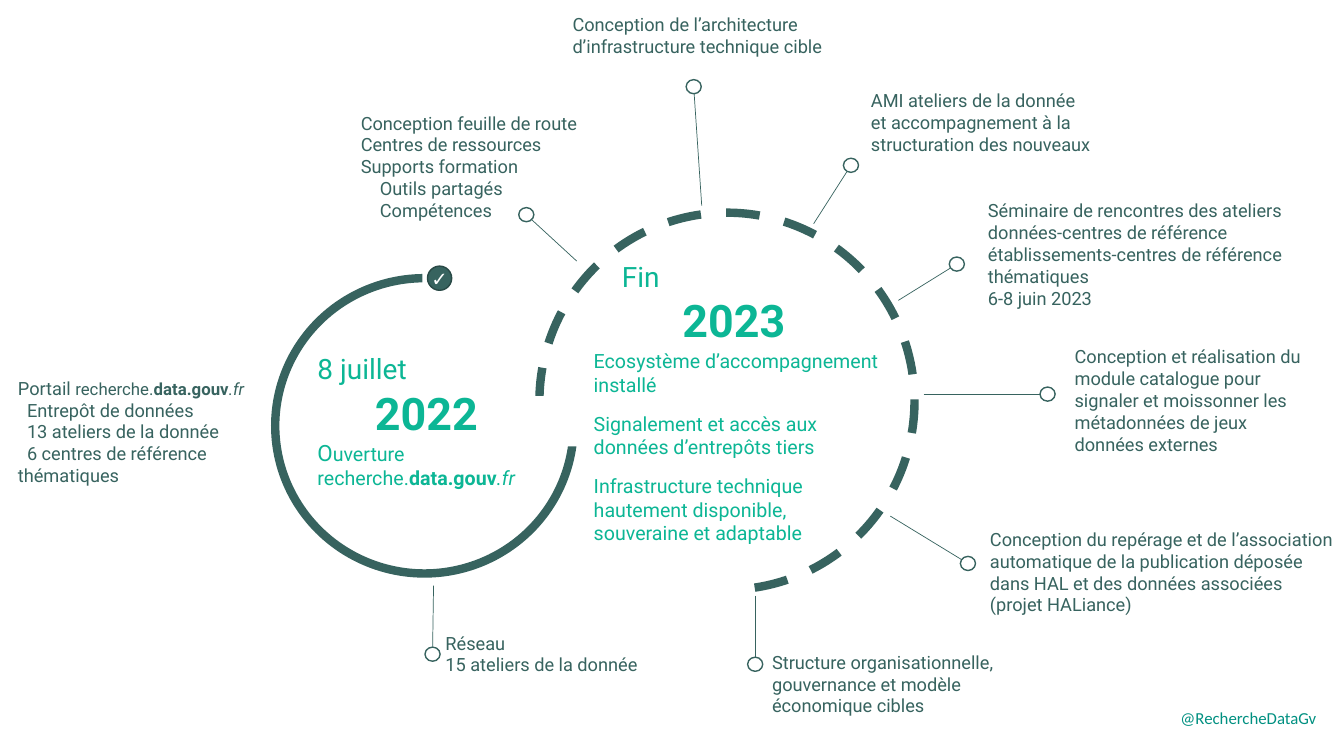
from dataclasses import dataclass
from math import hypot

from lxml.etree import SubElement
from pptx import Presentation
from pptx.dml.color import RGBColor
from pptx.enum.dml import MSO_LINE
from pptx.enum.shapes import MSO_CONNECTOR, MSO_SHAPE
from pptx.enum.text import MSO_ANCHOR, MSO_AUTO_SIZE, PP_ALIGN
from pptx.oxml.ns import qn
from pptx.util import Inches, Pt


@dataclass(frozen=True)
class Theme:
    dark: str = "37635F"
    outline: str = "294946"
    accent: str = "0CB695"
    handle: str = "009081"
    white: str = "FFFFFF"
    font: str = "Roboto"
    plain_font: str = "Calibri"
    small: int = 12
    label: int = 13
    body: int = 14
    initial: int = 16
    day: int = 20
    year: int = 32
    ring: int = 6


THEME = Theme()


@dataclass
class Line:
    """One paragraph; runs are (text, font overrides) pairs, indents are inches."""
    runs: list
    size: int = THEME.label
    color: str = THEME.dark
    font: str = THEME.font
    bold: bool = False
    left: float = 0
    before: int = 0
    align: PP_ALIGN = PP_ALIGN.LEFT


def line(text, **style):
    return Line([(text, {})], **style)


def address(size):
    return [("recherche.", {"size": Pt(size)}),
            ("data.gouv", {"size": Pt(size), "bold": True}),
            (".fr", {"size": Pt(size), "italic": True})]


class TimelineSlide:
    def __init__(self, slide, theme):
        self.slide = slide
        self.theme = theme

    def shape(self, kind, left, top, width, height, fill=None, stroke=None, weight=1):
        shape = self.slide.shapes.add_shape(
            kind, Inches(left), Inches(top), Inches(width), Inches(height))
        shape.shadow.inherit = False
        if fill:
            shape.fill.solid()
            shape.fill.fore_color.rgb = RGBColor.from_string(fill)
        else:
            shape.fill.background()
        if stroke:
            shape.line.color.rgb = RGBColor.from_string(stroke)
            shape.line.width = Pt(weight)
        else:
            shape.line.fill.background()
        return shape

    def cover(self, left, top, width, height):
        """White patch that opens a ring or hides its straight edges."""
        self.shape(MSO_SHAPE.RECTANGLE, left, top, width, height, self.theme.white)

    def fill_frame(self, frame, lines):
        for index, content in enumerate(lines):
            paragraph = frame.paragraphs[0] if index == 0 else frame.add_paragraph()
            paragraph.alignment = content.align
            properties = paragraph._p.get_or_add_pPr()
            properties.set("marL", str(Inches(content.left)))
            properties.set("indent", "0")
            if content.before:
                paragraph.space_before = Pt(content.before)
            font = paragraph.font
            font.name, font.size, font.bold = content.font, Pt(content.size), content.bold
            font.color.rgb = RGBColor.from_string(content.color)
            for text, overrides in content.runs:
                run = paragraph.add_run()
                run.text = text
                for name, value in overrides.items():
                    setattr(run.font, name, value)

    def text(self, left, top, width, height, lines):
        box = self.slide.shapes.add_textbox(
            Inches(left), Inches(top), Inches(width), Inches(height))
        box.text_frame.word_wrap = True
        box.text_frame.auto_size = MSO_AUTO_SIZE.SHAPE_TO_FIT_TEXT
        self.fill_frame(box.text_frame, lines)

    def pin(self, ring_point, centre, width=0.15, height=0.14):
        """Thin line from the ring to the edge of a small open circle."""
        (x1, y1), (x2, y2) = ring_point, centre
        keep = 1 - width / 2 / hypot(x2 - x1, y2 - y1)
        stem = self.slide.shapes.add_connector(
            MSO_CONNECTOR.STRAIGHT, Inches(x1), Inches(y1),
            Inches(x1 + (x2 - x1) * keep), Inches(y1 + (y2 - y1) * keep))
        stem.line.color.rgb = RGBColor.from_string(self.theme.dark)
        stem.line.width = Pt(0.5)
        SubElement(stem._element.spPr, qn("a:effectLst"))
        self.shape(MSO_SHAPE.OVAL, x2 - width / 2, y2 - height / 2, width, height,
                   self.theme.white, self.theme.dark)

    def check_badge(self, left, top, size):
        badge = self.shape(MSO_SHAPE.OVAL, left, top, size, size,
                           self.theme.dark, self.theme.outline)
        frame = badge.text_frame
        frame.margin_left = frame.margin_right = frame.margin_top = frame.margin_bottom = 0
        frame.word_wrap = False
        frame.vertical_anchor = MSO_ANCHOR.MIDDLE
        self.fill_frame(frame, [line("✓", size=self.theme.body, color=self.theme.white,
                                     font=self.theme.plain_font, align=PP_ALIGN.CENTER)])


# Ring point, pin centre, label box, label lines
MILESTONES = [
    ((4.3, 5.81), (4.29, 6.49), (4.32, 6.22, 2.7, 0.54),
     [line("Réseau"), line("15 ateliers de la donnée")]),
    ((5.72, 2.59), (5.22, 2.13), (3.48, 1.06, 2.7, 1.19),
     [line("Conception feuille de route"), line("Centres de ressources"),
      line("Supports formation"), line("Outils partagés", left=0.19),
      line("Compétences", left=0.19)]),
    ((6.96, 2.04), (6.88, 0.86), (5.58, 0.08, 3.19, 0.54),
     [line("Conception de l’architecture d’infrastructure technique cible")]),
    ((8.07, 2.22), (8.44, 1.64), (8.54, 0.84, 3.19, 0.76),
     [line("AMI ateliers de la donnée"),
      line("et accompagnement à la structuration des nouveaux")]),
    ((8.91, 2.98), (9.49, 2.62), (9.7, 1.93, 3.19, 1.19),
     [line("Séminaire de rencontres des ateliers données-centres de référence "
           "établissements-centres de référence thématiques"),
      line("6-8 juin 2023")]),
    ((9.16, 3.91), (10.39, 3.91), (10.56, 3.38, 2.55, 1.19),
     [line("Conception et réalisation du module catalogue pour signaler et "
           "moissonner les métadonnées de jeux données externes")]),
    ((8.83, 5.12), (9.6, 5.59), (9.72, 5.19, 3.61, 0.98),
     [line("Conception du repérage et de l’association automatique de la publication "
           "déposée dans HAL et des données associées (projet HALiance)")]),
    ((7.49, 5.91), (7.49, 6.59), (7.56, 6.41, 2.7, 0.76),
     [line("Structure organisationnelle, gouvernance et modèle économique cibles")]),
]

PORTAL = [
    Line([("Portail ", {})] + address(THEME.small)),
    line("Entrepôt de données", left=0.09),
    line("13 ateliers de la donnée", left=0.09),
    line("6 centres de référence", left=0.09),
    line("thématiques"),
]

GREEN = {"color": THEME.accent}
OPENING_2022 = [
    line("8 juillet", size=THEME.day, **GREEN),
    line("2022", size=THEME.year, bold=True, align=PP_ALIGN.CENTER, **GREEN),
    Line([("O", {"size": Pt(THEME.initial)}), ("uverture", {})], size=THEME.body, **GREEN),
    Line(address(THEME.body), size=THEME.body, **GREEN),
]
GOALS_2023 = [
    line("Fin", size=THEME.day, left=0.28, **GREEN),
    line("2023", size=THEME.year, bold=True, left=0.88, **GREEN),
    line("Ecosystème d’accompagnement installé", size=THEME.body, before=2, **GREEN),
    line("Signalement et accès aux données d’entrepôts tiers",
         size=THEME.body, before=11, **GREEN),
    line("Infrastructure technique hautement disponible, souveraine et adaptable",
         size=THEME.body, before=11, **GREEN),
]


def main():
    presentation = Presentation()
    presentation.slide_width, presentation.slide_height = Inches(13.33), Inches(7.5)
    timeline = TimelineSlide(
        presentation.slides.add_slide(presentation.slide_layouts[6]), THEME)

    timeline.shape(MSO_SHAPE.OVAL, 2.73, 2.76, 2.96, 2.93,
                   stroke=THEME.dark, weight=THEME.ring)
    timeline.cover(4.19, 2.58, 1.85, 1.85)
    ring_2023 = timeline.shape(MSO_SHAPE.PIE, 5.35, 2.11, 3.72, 3.74,
                               THEME.white, THEME.dark, THEME.ring)
    ring_2023.rotation = 180
    ring_2023.adjustments[0] = 0
    ring_2023.adjustments[1] = 162.31
    ring_2023.line.dash_style = MSO_LINE.DASH
    for patch in [(5.44, 3.8, 1.98, 0.36), (7.03, 4.16, 0.37, 1.76),
                  (5.19, 3.93, 0.32, 0.11)]:
        timeline.cover(*patch)

    timeline.text(3.05, 3.44, 2.36, 1.75, OPENING_2022)
    timeline.text(5.79, 2.52, 3.09, 2.99, GOALS_2023)
    timeline.text(0.08, 3.69, 2.7, 1.19, PORTAL)
    for ring_point, centre, label_box, label in MILESTONES:
        timeline.pin(ring_point, centre)
        timeline.text(*label_box, label)
    timeline.check_badge(4.24, 2.64, 0.24)
    timeline.text(11.61, 6.97, 1.62, 0.5,
                  [line("@RechercheDataGv", size=THEME.small, color=THEME.handle,
                        font=THEME.plain_font)])
    presentation.save("out.pptx")


if __name__ == "__main__":
    main()
